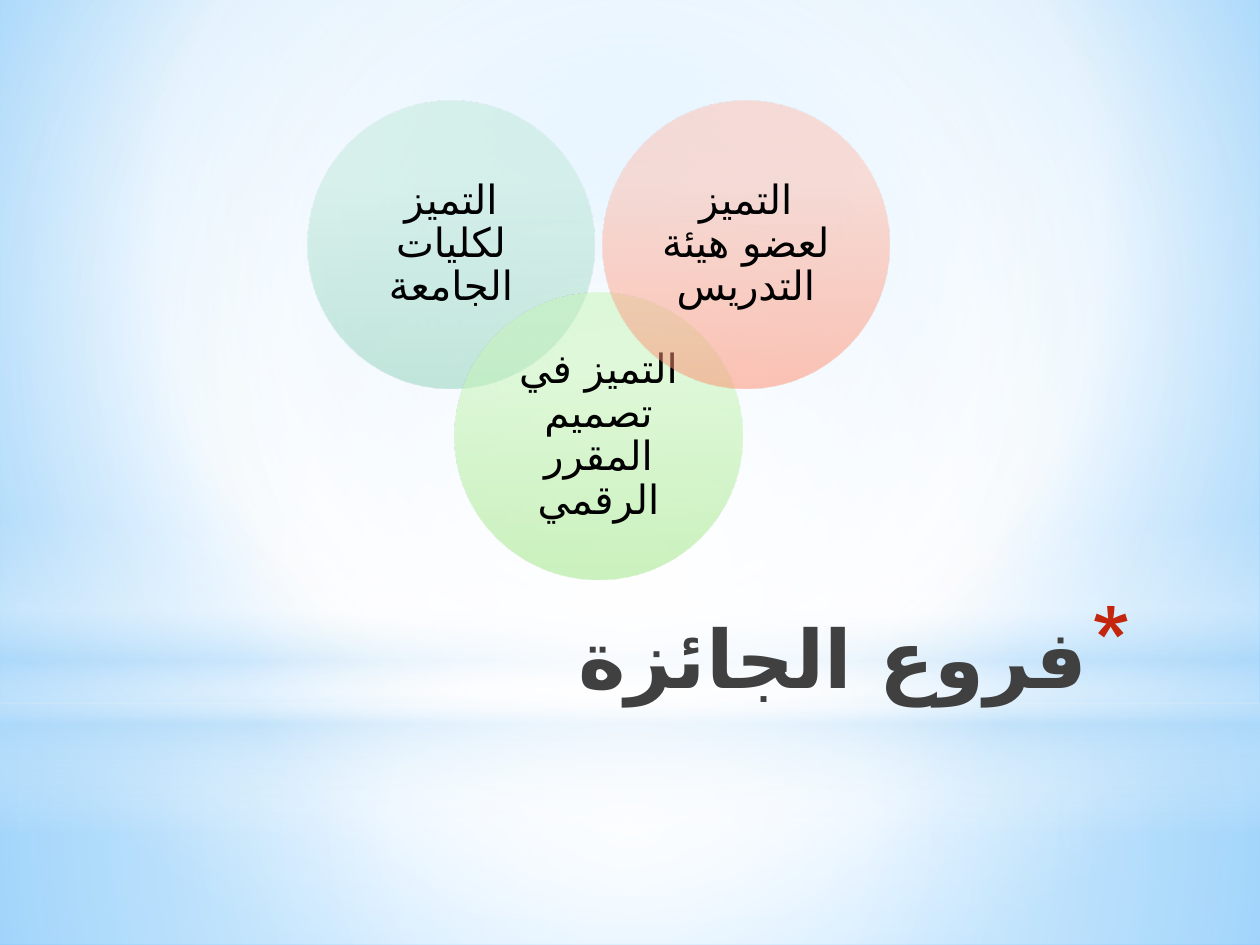
"""Build the slide of the three award branches as overlapping circles."""
from lxml.etree import SubElement, fromstring
from pptx import Presentation
from pptx.dml.color import RGBColor
from pptx.enum.shapes import MSO_SHAPE
from pptx.enum.text import MSO_ANCHOR, PP_ALIGN
from pptx.oxml.ns import qn
from pptx.util import Inches, Pt

FONT, ARABIC = "Karla", "DejaVu Sans"
MID = (50, 50, 50, 50)
SKY = [(0, "9ED5FF", 100), (60, "FFFFFF", 100), (100, "5BB9FF", 100)]
RECT, OVAL = MSO_SHAPE.RECTANGLE, MSO_SHAPE.OVAL
LAYERS = [
    (RECT, (0, 5.58, 10, 1.92), MID,
     [(0, "FFFFFF", 91), (37, "FFFFFF", 76), (100, "B4DCFA", 79)]),
    (RECT, (0, 0, 10, 5.58), MID,
     [(0, "FFFFFF", 89), (48, "FFFFFF", 62), (100, "B4DCFA", 79)]),
    (RECT, (0, 4.12, 10, 2.5), None,
     [(0, "FFFFFF", 0), (29, "FFFFFF", 30), (45, "B4DCFA", 40),
      (55, "FFFFFF", 26), (65, "B4DCFA", 60), (100, "FFFFFF", 0)]),
    (OVAL, (0, 1.75, 10, 5.58), MID,
     [(0, "FFFFFF", 100), (56, "FFFFFF", 0)]),
]
TITLE = "فروع الجائزة "
CIRCLES = [
    ("التميز لكليات الجامعة", 0.8, "C0E9DA", "8CD1B8"),
    ("التميز في تصميم المقرر الرقمي", 2.32, "C6F6B5", "98E57C"),
    ("التميز لعضو هيئة التدريس", 0.8, "FFC0AF", "FF8968"),
]
LEFT, STEP, SIZE, INSET = 2.44, 1.17, 2.28, 0.33


def paint(host, stops, focus=None):
    marks = "".join(
        f'<a:gs pos="{pos * 1000}"><a:srgbClr val="{tint}">'
        f'<a:alpha val="{alpha * 1000}"/></a:srgbClr></a:gs>'
        for pos, tint, alpha in stops)
    shade = '<a:lin ang="5400000" scaled="0"/>'
    if focus:
        sides = " ".join(f'{side}="{part * 1000}"' for side, part in zip("ltrb", focus))
        shade = f'<a:path path="circle"><a:fillToRect {sides}/></a:path>'
    grad = fromstring(
        '<a:gradFill xmlns:a="http://schemas.openxmlformats.org/drawingml/2006/main"'
        f' rotWithShape="1"><a:gsLst>{marks}</a:gsLst>{shade}</a:gradFill>')
    host.replace(host.find(qn("a:noFill")), grad)


def add_form(slide, kind, box, stops, focus=None):
    form = slide.shapes.add_shape(kind, *map(Inches, box))
    form.shadow.inherit = False
    form.fill.background()
    paint(form.element.spPr, stops, focus)
    form.line.fill.background()


def add_text(slide, box, text, size, tint, align, pad, bold=False):
    frame = slide.shapes.add_textbox(*map(Inches, box)).text_frame
    frame.word_wrap = True
    frame.margin_left = frame.margin_right = Inches(0.1)
    frame.margin_top = frame.margin_bottom = Inches(pad)
    para = frame.paragraphs[0]
    para.alignment = align
    para._p.get_or_add_pPr().set("rtl", "1")
    run = para.add_run()
    run.text = text
    font = run.font
    font.name, font.size, font.bold = FONT, Pt(size), bold
    font.color.rgb = RGBColor.from_string(tint)
    SubElement(font._element, qn("a:cs"), typeface=ARABIC)
    return frame


def add_star(para):
    props = para._p.get_or_add_pPr()
    props.set("marL", str(Inches(0.35)))
    props.set("indent", str(Inches(-0.35)))
    SubElement(SubElement(props, qn("a:buClr")), qn("a:srgbClr"), val="C3260C")
    SubElement(props, qn("a:buSzPct"), val="128000")
    SubElement(props, qn("a:buChar"), char="*")


def main():
    deck = Presentation()
    deck.slide_width, deck.slide_height = Inches(10), Inches(7.5)
    slide = deck.slides.add_slide(deck.slide_layouts[6])
    slide.background.fill.background()
    paint(slide.element.find(".//" + qn("p:bgPr")), SKY, (20, 10, 20, 60))
    for kind, box, focus, stops in LAYERS:
        add_form(slide, kind, box, stops, focus)
    title = add_text(slide, (1.96, 4.78, 7.12, 1.25), TITLE, 46, "404040",
                     PP_ALIGN.RIGHT, 0.05, True)
    add_star(title.paragraphs[0])
    side = SIZE - 2 * INSET
    for i, (text, top, light, dark) in enumerate(CIRCLES):
        left = LEFT + i * STEP
        add_form(slide, OVAL, (left, top, SIZE, SIZE),
                 [(28, light, 50), (100, dark, 50)])
        frame = add_text(slide, (left + INSET, top + INSET, side, side), text,
                         23, "000000", PP_ALIGN.CENTER, 0.1)
        frame.vertical_anchor = MSO_ANCHOR.MIDDLE
        frame.paragraphs[0].line_spacing = 0.9
    deck.save("out.pptx")


if __name__ == "__main__":
    main()
